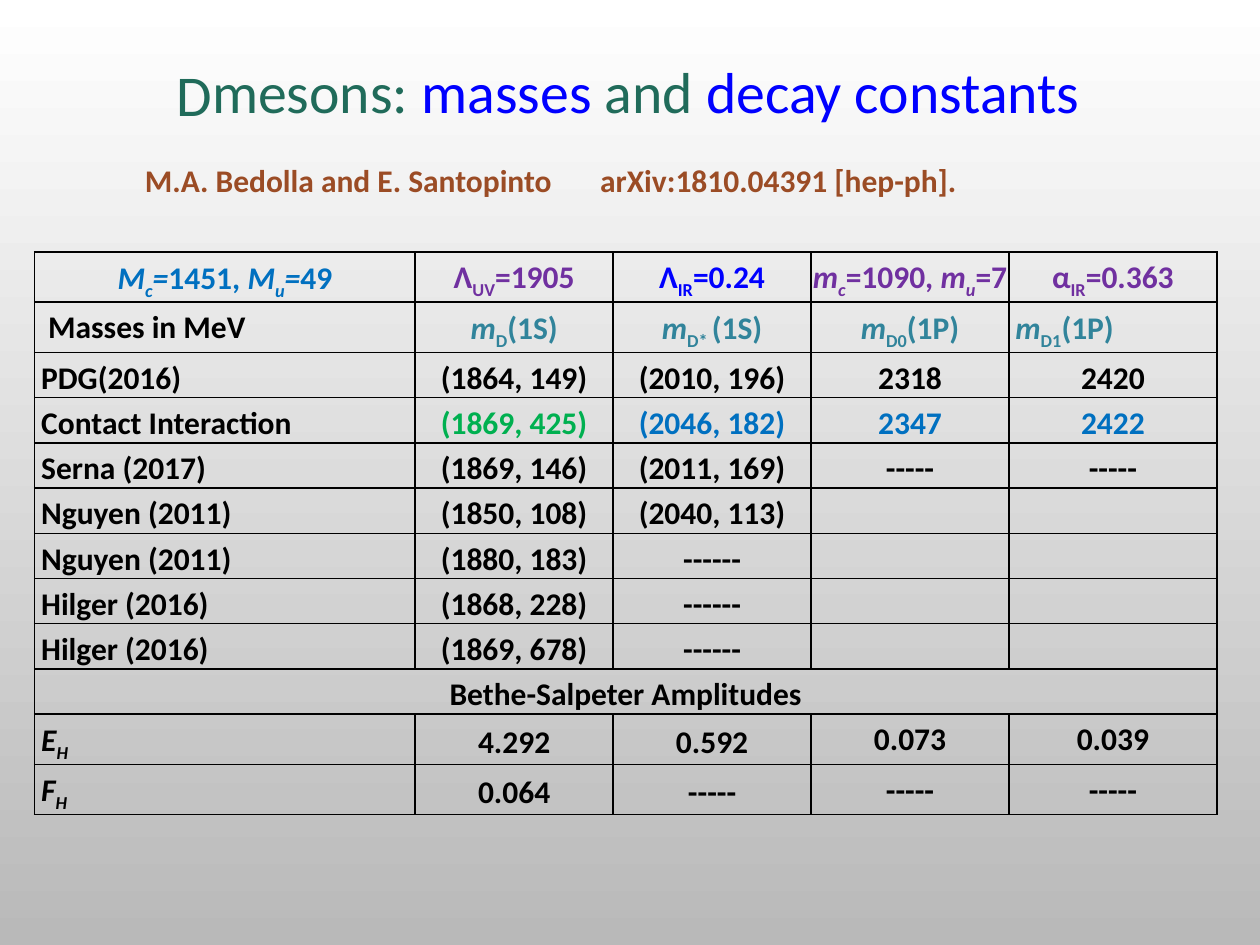
"""Build the slide on D meson masses and decay constants."""
import pptx
import pptx.dml.color
import pptx.enum.text
import pptx.oxml
import pptx.oxml.ns
import pptx.util

Cm = pptx.util.Cm
RGBColor = pptx.dml.color.RGBColor
Align = pptx.enum.text.PP_ALIGN
Anchor = pptx.enum.text.MSO_ANCHOR

WHITE = RGBColor(0xFF, 0xFF, 0xFF)
GRAY = RGBColor(0xB9, 0xB9, 0xB9)
BLACK = RGBColor(0x00, 0x00, 0x00)
FOREST = RGBColor(0x20, 0x6B, 0x5A)
BLUE = RGBColor(0x00, 0x00, 0xFF)
BROWN = RGBColor(0x9B, 0x4C, 0x25)
AZURE = RGBColor(0x00, 0x70, 0xC0)
PURPLE = RGBColor(0x70, 0x30, 0xA0)
TEAL = RGBColor(0x31, 0x84, 0x9B)
GREEN = RGBColor(0x00, 0xB0, 0x50)

FONT = "Calibri"
TITLE_SIZE = 33
TEXT_SIZE = 18
NAMESPACE = pptx.oxml.ns.nsdecls("a")


def format_font(paragraph, size, color, bold=False):
    paragraph.font.name = FONT
    paragraph.font.size = pptx.util.Pt(size)
    paragraph.font.bold = bold
    paragraph.font.color.rgb = color


def add_borders(cell):
    properties = cell._tc.get_or_add_tcPr()
    for side in ("lnL", "lnR", "lnT", "lnB"):
        properties.append(pptx.oxml.parse_xml(
            f'<a:{side} {NAMESPACE} w="12700"><a:solidFill>'
            f'<a:srgbClr val="{BLACK}"/></a:solidFill></a:{side}>'))


presentation = pptx.Presentation()
presentation.slide_width = Cm(25.4)
presentation.slide_height = Cm(19.05)
slide = presentation.slides.add_slide(presentation.slide_layouts[5])

background = slide.background.fill
background.gradient()
background.gradient_angle = 270
for stop, color, position in zip(background.gradient_stops, (WHITE, GRAY), (0, 1)):
    stop.color.rgb = color
    stop.position = position

PARAMETERS = [
    (AZURE, [("M", "italic"), ("c", "italic sub"), ("=", "italic"), ("1451, ", ""),
             ("M", "italic"), ("u", "italic sub"), ("=", "italic"), ("49", "")]),
    (PURPLE, [("Λ", ""), ("UV", "sub"), ("=1905", "")]),
    (BLUE, [("Λ", ""), ("IR", "sub"), ("=0.24", "")]),
    (PURPLE, [("m", "italic"), ("c", "italic sub"), ("=1090, ", ""),
              ("m", "italic"), ("u", "italic sub"), ("=7", "")]),
    (PURPLE, [("α", ""), ("IR", "sub"), ("=0.363", "")]),
]
STATES = [("D", "(1S)"), ("D* ", "(1S)"), ("D0", "(1P)"), ("D1", "(1P)")]
MASSES = [
    ("PDG(2016)", "(1864, 149)", "(2010, 196)", "2318", "2420"),
    ("Contact Interaction", "(1869, 425)", "(2046, 182)", "2347", "2422"),
    ("Serna (2017)", "(1869, 146)", "(2011, 169)", "-----", "-----"),
    ("Nguyen (2011)", "(1850, 108)", "(2040, 113)", "", ""),
    ("Nguyen (2011)", "(1880, 183)", "------", "", ""),
    ("Hilger (2016)", "(1868, 228)", "------", "", ""),
    ("Hilger (2016)", "(1869, 678)", "------", "", ""),
]
AMPLITUDES = [
    ("E", "4.292", "0.592", "0.073", "0.039"),
    ("F", "0.064", "-----", "-----", "-----"),
]
CONTACT_COLORS = [BLACK, GREEN, AZURE, AZURE, AZURE]

rows = [PARAMETERS]
rows.append([(BLACK, [("Masses in MeV", "")])] + [
    (TEAL, [("m", "italic"), (state, "sub"), (level, "")]) for state, level in STATES])
for values in MASSES:
    colors = CONTACT_COLORS if values[0] == "Contact Interaction" else [BLACK] * 5
    rows.append([(color, [(value, "")]) for color, value in zip(colors, values)])
heading_row = len(rows)
rows.append([(BLACK, [(text, "")]) for text in ("Bethe-Salpeter Amplitudes", "", "", "", "")])
for symbol, *values in AMPLITUDES:
    rows.append([(BLACK, [(symbol, "italic"), ("H", "italic sub")])]
                + [(BLACK, [(value, "")]) for value in values])

COLUMN_WIDTHS = (7.67, 3.99, 3.99, 3.99, 4.19)
table = slide.shapes.add_table(
    len(rows), 5, Cm(0.7), Cm(5.08), Cm(23.83), Cm(11.3)).table
table.first_row = False
table.horz_banding = False
for column, width in zip(table.columns, COLUMN_WIDTHS):
    column.width = Cm(width)

for row_index, row in enumerate(rows):
    has_subscript = row_index < 2 or row_index > heading_row
    table.rows[row_index].height = Cm(1.01 if has_subscript else 0.91)
    for column_index, (color, runs) in enumerate(row):
        cell = table.cell(row_index, column_index)
        is_tight = row_index == 0 and column_index > 0
        cell.margin_left = cell.margin_right = Cm(0 if is_tight else 0.13)
        cell.margin_top = Cm(0 if is_tight else 0.02)
        cell.margin_bottom = Cm(0)
        add_borders(cell)
        cell.fill.background()
        if column_index and row_index > 1 and (column_index < 3 or row_index < heading_row):
            cell.vertical_anchor = Anchor.MIDDLE
        paragraph = cell.text_frame.paragraphs[0]
        paragraph.line_spacing = 1.15
        is_left = column_index == 0 and row_index not in (0, heading_row)
        is_left = is_left or (row_index, column_index) == (1, 4)
        paragraph.alignment = Align.LEFT if is_left else Align.CENTER
        format_font(paragraph, TEXT_SIZE, color, bold=True)
        for text, style in runs:
            if text:
                run = paragraph.add_run()
                run.text = text
                if "italic" in style:
                    run.font.italic = True
                if "sub" in style:
                    run._r.get_or_add_rPr().set("baseline", "-25000")
table.cell(1, 0).margin_left = Cm(0.27)
table.cell(heading_row, 0).merge(table.cell(heading_row, 4))

citation = slide.shapes.add_textbox(Cm(2.67), Cm(3.12), Cm(20), Cm(1.03)).text_frame
citation.word_wrap = True
paragraph = citation.paragraphs[0]
paragraph.text = "M.A. Bedolla and E. Santopinto\tarXiv:1810.04391 [hep-ph]."
paragraph._p.get_or_add_pPr().append(pptx.oxml.parse_xml(
    f'<a:tabLst {NAMESPACE}><a:tab pos="{Cm(9.18)}" algn="l"/></a:tabLst>'))
format_font(paragraph, TEXT_SIZE, BROWN, bold=True)

title = slide.shapes.title
title.left, title.top, title.width, title.height = Cm(1.04), Cm(0.53), Cm(23.7), Cm(2.11)
title.text_frame.vertical_anchor = Anchor.BOTTOM
paragraph = title.text_frame.paragraphs[0]
paragraph.alignment = Align.CENTER
format_font(paragraph, TITLE_SIZE, FOREST)
for text, color in ((" mesons: ", FOREST), ("masses", BLUE),
                    (" and ", FOREST), ("decay constants", BLUE)):
    run = paragraph.add_run()
    run.text = text
    run.font.color.rgb = color

initial = slide.shapes.add_textbox(Cm(3.3), Cm(1.07), Cm(1.22), Cm(1.68)).text_frame
initial.word_wrap = False
paragraph = initial.paragraphs[0]
paragraph.text = "D"
format_font(paragraph, TITLE_SIZE, FOREST)

presentation.save("out.pptx")
